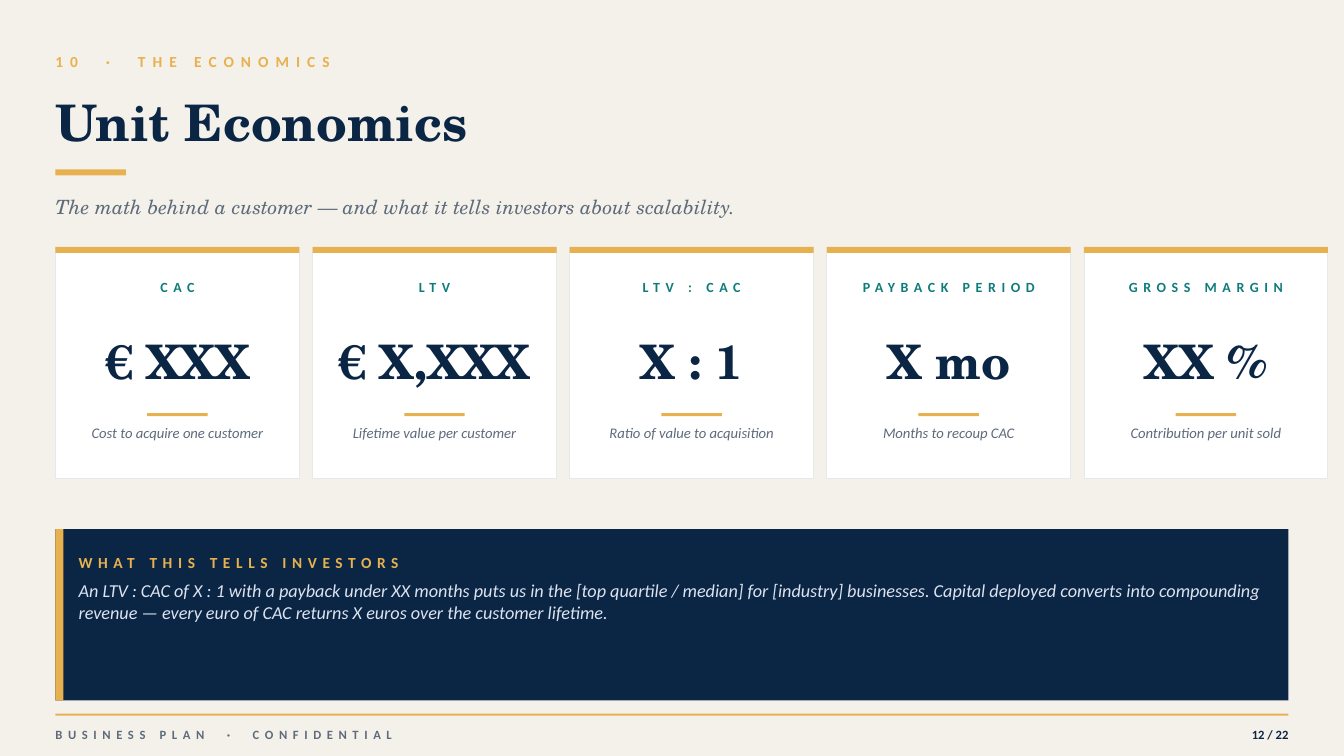
from pptx import Presentation
from pptx.dml.color import RGBColor
from pptx.enum.shapes import MSO_SHAPE as Shape
from pptx.enum.text import MSO_ANCHOR as Anchor, MSO_AUTO_SIZE as AutoSize, PP_ALIGN as Align
from pptx.util import Inches, Pt

CREAM = RGBColor(0xF4, 0xF1, 0xEA)
GOLD = RGBColor(0xE8, 0xB1, 0x4F)
NAVY = RGBColor(0x0B, 0x25, 0x45)
TEAL = RGBColor(0x0E, 0x7C, 0x7B)
SLATE = RGBColor(0x5E, 0x6B, 0x7A)
MIST = RGBColor(0xDC, 0xE3, 0xEE)
BORDER = RGBColor(0xE5, 0xE9, 0xEE)
WHITE = RGBColor(0xFF, 0xFF, 0xFF)
SANS = "Calibri"
SERIF = "TeX Gyre Schola"

MARGIN = 0.55
CONTENT_WIDTH = 12.23
CARD_TOP = 2.45
CARD_WIDTH = 2.42
CARD_STEP = 2.55
CARD_PADDING = 0.15
CARD_RULE_WIDTH = 0.6
PANEL_TOP = 5.25
PANEL_HEIGHT = 1.7
METRICS = [
    ("CAC", "€ XXX", "Cost to acquire one customer"),
    ("LTV", "€ X,XXX", "Lifetime value per customer"),
    ("LTV : CAC", "X : 1", "Ratio of value to acquisition"),
    ("PAYBACK PERIOD", "X mo", "Months to recoup CAC"),
    ("GROSS MARGIN", "XX %", "Contribution per unit sold"),
]
INSIGHT = (
    "An LTV : CAC of X : 1 with a payback under XX months puts us in the "
    "[top quartile / median] for [industry] businesses. Capital deployed converts "
    "into compounding revenue — every euro of CAC returns X euros over the "
    "customer lifetime."
)


def write_text(box, text, size, color, font=SANS, bold=False, italic=False,
               spacing=0, align=Align.LEFT, anchor=Anchor.MIDDLE):
    """Put one formatted paragraph in a box without margins."""
    frame = box.text_frame
    frame.auto_size = AutoSize.NONE
    frame.word_wrap = True
    frame.vertical_anchor = anchor
    frame.margin_left = frame.margin_right = frame.margin_top = frame.margin_bottom = 0
    para = frame.paragraphs[0]
    para.alignment = align
    span = para.add_run()
    span.text = text
    span.font.name = font
    span.font.size = Pt(size)
    span.font.bold = bold
    span.font.italic = italic
    span.font.color.rgb = color
    if spacing:
        span.font._element.set("spc", str(spacing * 100))


def add_text(page, left, top, width, height, text, **style):
    """Add a text box at the given inches."""
    box = page.shapes.add_textbox(Inches(left), Inches(top), Inches(width), Inches(height))
    write_text(box, text, **style)


def add_block(page, left, top, width, height, fill, border=None):
    """Add a flat rectangle with an optional thin border."""
    block = page.shapes.add_shape(
        Shape.RECTANGLE, Inches(left), Inches(top), Inches(width), Inches(height))
    block.shadow.inherit = False
    block.fill.solid()
    block.fill.fore_color.rgb = fill
    if border is None:
        block.line.fill.background()
    else:
        block.line.color.rgb = border
        block.line.width = Pt(0.5)


def add_header(page):
    """Add the section label, title, accent rule and subtitle."""
    add_text(page, MARGIN, 0.45, 10, 0.32, "10  ·  THE ECONOMICS",
             size=11, color=GOLD, bold=True, spacing=5)
    title = page.shapes.title
    title.left, title.top = Inches(MARGIN), Inches(0.78)
    title.width, title.height = Inches(12.3), Inches(0.85)
    write_text(title, "Unit Economics", size=36, color=NAVY, font=SERIF, bold=True)
    add_block(page, MARGIN, 1.68, 0.7, 0.06, GOLD)
    add_text(page, MARGIN, 1.85, 12.3, 0.4,
             "The math behind a customer — and what it tells investors about scalability.",
             size=14, color=SLATE, font=SERIF, italic=True)


def add_card(page, left, label, value, caption):
    """Add one metric card."""
    add_block(page, left, CARD_TOP, CARD_WIDTH, 2.3, WHITE, BORDER)
    add_block(page, left, CARD_TOP, CARD_WIDTH, 0.06, GOLD)
    inner = left + CARD_PADDING
    width = CARD_WIDTH - 2 * CARD_PADDING
    add_text(page, inner, 2.7, width, 0.3, label,
             size=10, color=TEAL, bold=True, spacing=4, align=Align.CENTER)
    add_text(page, inner, 3.1, width, 0.95, value,
             size=34, color=NAVY, font=SERIF, bold=True, align=Align.CENTER)
    add_block(page, left + (CARD_WIDTH - CARD_RULE_WIDTH) / 2, 4.1, CARD_RULE_WIDTH, 0.03, GOLD)
    add_text(page, inner, 4.2, width, 0.45, caption, size=10.5, color=SLATE,
             italic=True, align=Align.CENTER, anchor=Anchor.TOP)


def add_insight(page):
    """Add the dark panel with the message for investors."""
    add_block(page, MARGIN, PANEL_TOP, CONTENT_WIDTH, PANEL_HEIGHT, NAVY)
    add_block(page, MARGIN, PANEL_TOP, 0.08, PANEL_HEIGHT, GOLD)
    add_text(page, 0.78, 5.4, 8, 0.35, "WHAT THIS TELLS INVESTORS",
             size=11, color=GOLD, bold=True, spacing=4)
    add_text(page, 0.78, 5.75, 12, 1.1, INSIGHT,
             size=13, color=MIST, italic=True, anchor=Anchor.TOP)


def add_footer(page):
    """Add the footer rule, label and page number."""
    add_block(page, MARGIN, 7.08, CONTENT_WIDTH, 0.02, GOLD)
    add_text(page, MARGIN, 7.15, 6, 0.28, "BUSINESS PLAN  ·  CONFIDENTIAL",
             size=9, color=SLATE, bold=True, spacing=4)
    add_text(page, MARGIN + CONTENT_WIDTH - 1, 7.15, 1, 0.28, "12 / 22",
             size=9, color=NAVY, bold=True, align=Align.RIGHT)


def main():
    """Build and save the unit economics slide."""
    deck = Presentation()
    deck.slide_width, deck.slide_height = Inches(13.33), Inches(7.5)
    page = deck.slides.add_slide(deck.slide_layouts.get_by_name("Title Only"))
    page.background.fill.solid()
    page.background.fill.fore_color.rgb = CREAM
    add_header(page)
    for index, metric in enumerate(METRICS):
        add_card(page, MARGIN + index * CARD_STEP, *metric)
    add_insight(page)
    add_footer(page)
    deck.save("out.pptx")


if __name__ == "__main__":
    main()
